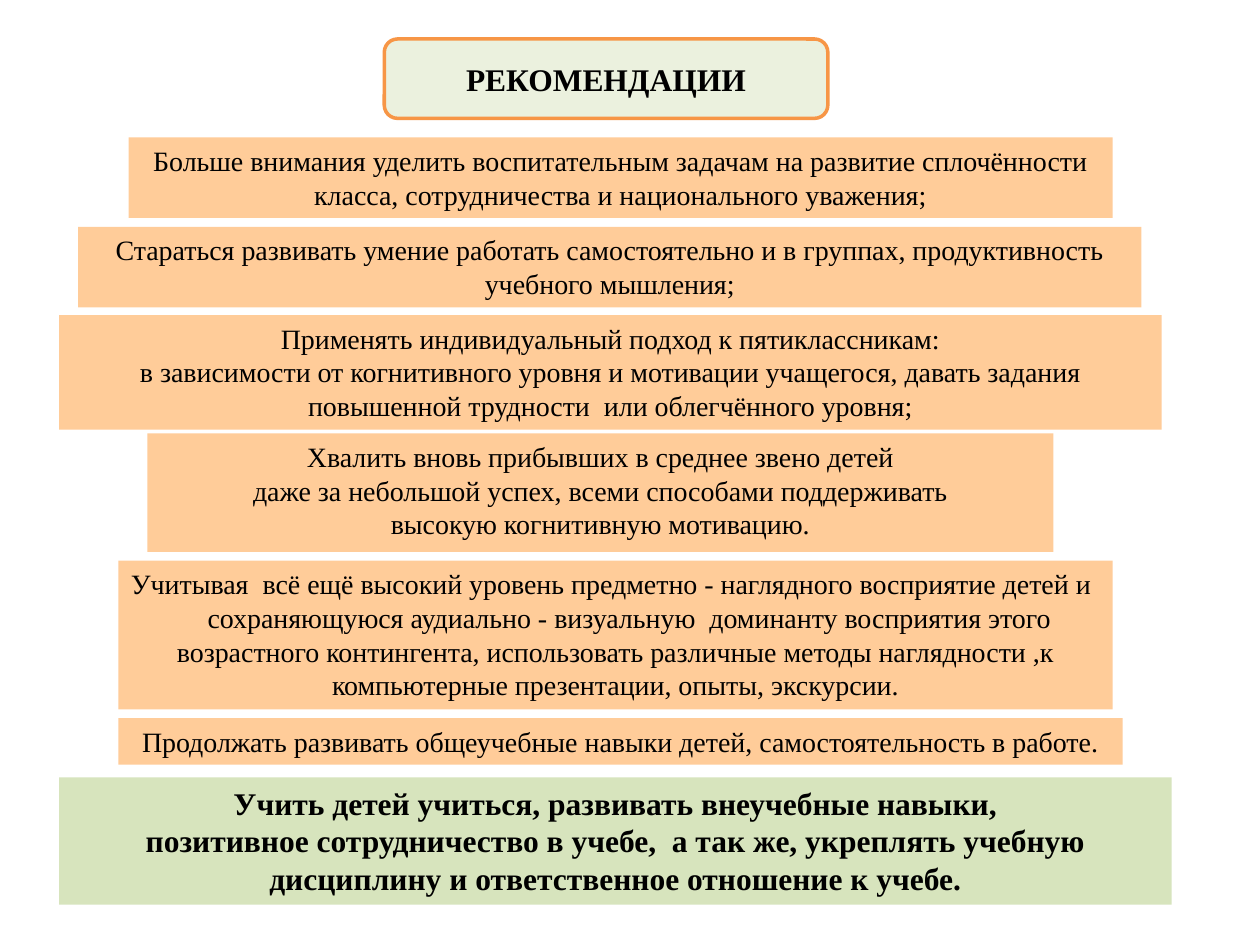
"""Build the slide of recommendations for teachers."""
from dataclasses import dataclass

from pptx import Presentation
from pptx.dml.color import RGBColor
from pptx.enum.shapes import MSO_SHAPE
from pptx.enum.text import MSO_ANCHOR, MSO_AUTO_SIZE, PP_ALIGN
from pptx.util import Inches, Pt

RECT, ROUNDED = MSO_SHAPE.RECTANGLE, MSO_SHAPE.ROUNDED_RECTANGLE
TOP, MIDDLE = MSO_ANCHOR.TOP, MSO_ANCHOR.MIDDLE
LEFT, CENTER = PP_ALIGN.LEFT, PP_ALIGN.CENTER
GROW, FIXED = MSO_AUTO_SIZE.SHAPE_TO_FIT_TEXT, MSO_AUTO_SIZE.NONE
FONT = "Times New Roman"
PEACH, GREEN, PALE_GREEN, ORANGE, BLACK = "FFCC99", "D7E4BD", "EBF1DE", "F79646", "000000"


@dataclass(frozen=True)
class Line:
    text: str
    align: PP_ALIGN = CENTER
    indent: float = 0


@dataclass(frozen=True)
class Box:
    left: float
    top: float
    width: float
    height: float
    lines: tuple[Line, ...]
    fill: str = PEACH
    size: int = 16
    bold: bool = False
    border: str = ""


BOXES = (
    Box(1.02, 1.09, 7.81, 0.64, (
        Line("Больше внимания уделить воспитательным задачам на развитие сплочённости "
             "класса, сотрудничества и национального уважения;"),)),
    Box(0.62, 1.8, 8.44, 0.64, (
        Line("Стараться развивать умение работать самостоятельно и в группах, "
             "продуктивность учебного мышления;"),)),
    Box(0.47, 2.5, 8.75, 0.91, (
        Line("Применять индивидуальный подход к пятиклассникам:"),
        Line("в зависимости от когнитивного уровня и мотивации учащегося, давать задания "
             "повышенной трудности  или облегчённого уровня;"))),
    Box(1.17, 3.44, 7.19, 0.94, (
        Line("Хвалить вновь прибывших в среднее звено детей"),
        Line("даже за небольшой успех, всеми способами поддерживать"),
        Line("высокую когнитивную мотивацию."))),
    Box(0.94, 4.45, 7.89, 1.18, (
        Line("Учитывая  всё ещё высокий уровень предметно - наглядного восприятие детей и",
             LEFT),
        Line("сохраняющуюся аудиально - визуальную  доминанту восприятия этого "
             "возрастного контингента, использовать различные методы наглядности ,к "
             "компьютерные презентации, опыты, экскурсии.", indent=0.22))),
    Box(0.94, 5.7, 7.97, 0.37, (
        Line("Продолжать развивать общеучебные навыки детей, самостоятельность в работе."),)),
    Box(0.47, 6.17, 8.83, 1.01, (
        Line("Учить детей учиться, развивать внеучебные навыки,"),
        Line("позитивное сотрудничество в учебе,  а так же, укреплять учебную дисциплину "
             "и ответственное отношение к учебе.")), GREEN, 18, True),
    Box(3.05, 0.31, 3.52, 0.63, (Line("РЕКОМЕНДАЦИИ"),), PALE_GREEN, 18, True, ORANGE),
)


def rgb(value: str) -> RGBColor:
    """Turn a hex string into a colour."""
    return RGBColor.from_string(value)


def write_line(p, line: Line, box: Box) -> None:
    """Fill one paragraph with a line of the box."""
    p.text = line.text
    p.alignment = line.align
    p.font.name = FONT
    p.font.size = Pt(box.size)
    p.font.bold = box.bold
    p.font.color.rgb = rgb(BLACK)
    if line.indent:
        p._p.get_or_add_pPr().set("indent", str(Inches(line.indent)))


def draw_box(slide, box: Box) -> None:
    """Draw a filled box with its text; a bordered one is rounded."""
    sp = slide.shapes.add_shape(
        ROUNDED if box.border else RECT,
        Inches(box.left), Inches(box.top), Inches(box.width), Inches(box.height))
    sp.shadow.inherit = False
    sp.fill.solid()
    sp.fill.fore_color.rgb = rgb(box.fill)
    if box.border:
        sp.line.color.rgb = rgb(box.border)
        sp.line.width = Pt(2)
    else:
        sp.line.fill.background()
    tf = sp.text_frame
    tf.word_wrap = True
    tf.auto_size = FIXED if box.border else GROW
    tf.vertical_anchor = MIDDLE if box.border else TOP
    for i, line in enumerate(box.lines):
        write_line(tf.add_paragraph() if i else tf.paragraphs[0], line, box)


def main() -> None:
    """Build and save the presentation."""
    prs = Presentation()
    prs.slide_width, prs.slide_height = Inches(10), Inches(7.5)
    s = prs.slides.add_slide(prs.slide_layouts[6])
    for box in BOXES:
        draw_box(s, box)
    prs.save("out.pptx")


if __name__ == "__main__":
    main()
